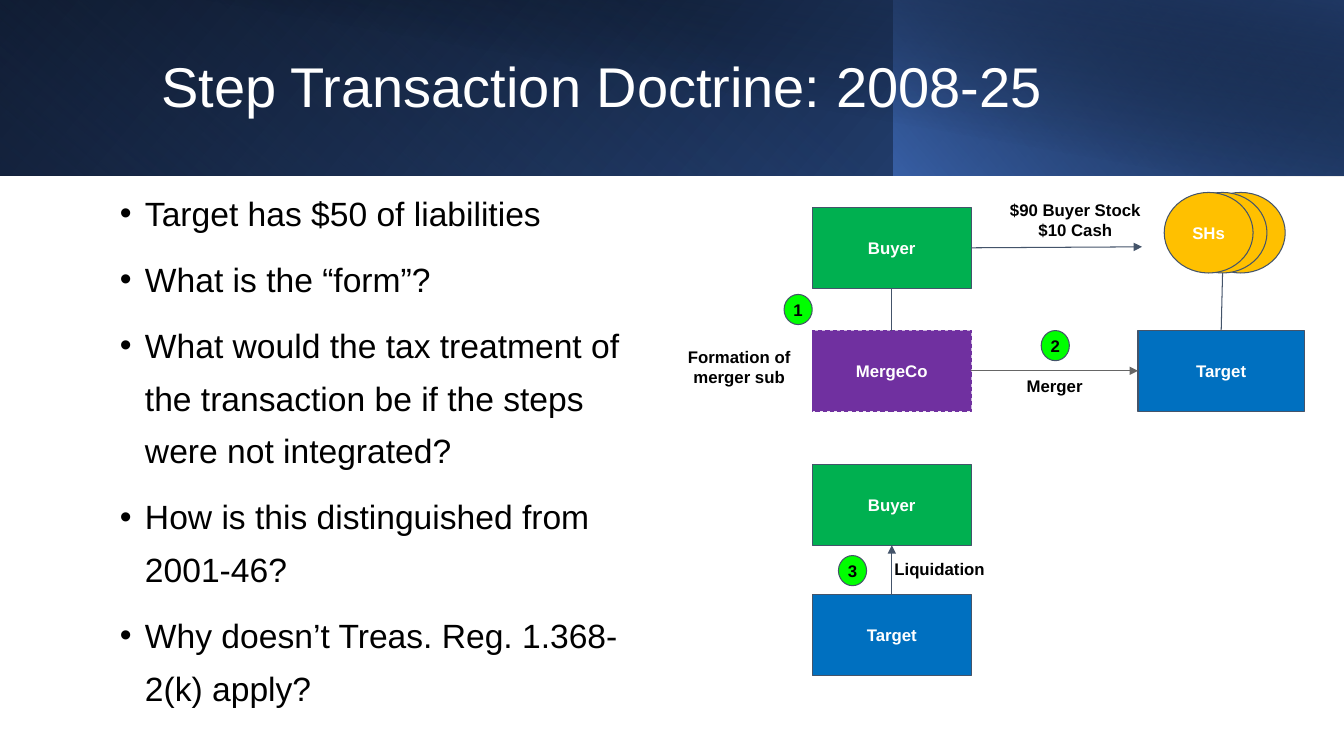
from dataclasses import dataclass

from pptx import Presentation
from pptx.dml.color import RGBColor
from pptx.enum.dml import MSO_LINE
from pptx.enum.shapes import MSO_CONNECTOR, MSO_SHAPE
from pptx.enum.text import MSO_ANCHOR, PP_ALIGN
from pptx.oxml import parse_xml
from pptx.oxml.ns import nsdecls, qn
from pptx.util import Cm, Pt

SLATE, WHITE, BLACK = "44546A", "FFFFFF", "000000"
GREEN, BLUE, PURPLE, GOLD, LIME = "00B050", "0070C0", "7030A0", "FFC000", "00FF00"
BOLD = {"name": "Arial", "size": Pt(12), "bold": True}
TOP, LEFT, BOTTOM, RIGHT = range(4)


@dataclass
class Panel:
    box: tuple
    stops: list  # position, colour, opacity
    angle: int
    flip: bool = True
    turn: int = 0


@dataclass
class Node:
    text: str
    box: tuple
    fill: str
    kind: MSO_SHAPE = MSO_SHAPE.RECTANGLE
    ink: str = WHITE
    line: str = SLATE
    dash: bool = False
    pad: float = 0.25


@dataclass
class Label:
    lines: list
    box: tuple


def color(code: str) -> RGBColor:
    return RGBColor.from_string(code)


def cms(box: tuple) -> list:
    return [Cm(n) for n in box]


def write(frame, lines: list, ink: str, form: dict, para: dict) -> None:
    """Fill a text frame, one paragraph for each line."""
    frame.word_wrap = True
    for i, line in enumerate(lines):
        item = frame.add_paragraph() if i else frame.paragraphs[0]
        for key, value in para.items():
            setattr(item, key, value)
        run = item.add_run()
        run.text = line
        run.font.color.rgb = color(ink)
        for key, value in form.items():
            setattr(run.font, key, value)


def inset(frame, pad: float) -> None:
    for side in ("left", "top", "right", "bottom"):
        setattr(frame, f"margin_{side}", Cm(pad))


def add_panel(slide, panel: Panel) -> None:
    shape = slide.shapes.add_shape(MSO_SHAPE.RECTANGLE, *cms(panel.box))
    shape.shadow.inherit = False
    shape.line.fill.background()
    shape.fill.background()
    shape.rotation = panel.turn
    props = shape._element.spPr
    if panel.flip:
        props.get_or_add_xfrm().set("flipH", "1")
    stops = "".join(
        f'<a:gs pos="{pos * 1000}"><a:srgbClr val="{code}">'
        f'<a:alpha val="{alpha * 1000}"/></a:srgbClr></a:gs>'
        for pos, code, alpha in panel.stops)
    grad = parse_xml(
        f'<a:gradFill {nsdecls("a")} rotWithShape="1"><a:gsLst>{stops}</a:gsLst>'
        f'<a:lin ang="{panel.angle * 60000}" scaled="0"/></a:gradFill>')
    props.replace(props.find(qn("a:noFill")), grad)


def add_node(slide, node: Node):
    shape = slide.shapes.add_shape(node.kind, *cms(node.box))
    shape.shadow.inherit = False
    shape.fill.solid()
    shape.fill.fore_color.rgb = color(node.fill)
    shape.line.color.rgb = color(node.line)
    shape.line.width = Pt(0.75)
    if node.dash:
        shape.line.dash_style = MSO_LINE.DASH
    if node.text:
        frame = shape.text_frame
        inset(frame, node.pad)
        frame.vertical_anchor = MSO_ANCHOR.MIDDLE
        write(frame, [node.text], node.ink, BOLD, {"alignment": PP_ALIGN.CENTER})
    return shape


def add_label(slide, label: Label) -> None:
    frame = slide.shapes.add_textbox(*cms(label.box)).text_frame
    inset(frame, 0.25)
    write(frame, label.lines, BLACK, BOLD, {"alignment": PP_ALIGN.CENTER})


def add_link(slide, start: tuple, end: tuple, arrow: bool = False,
             ink: str = SLATE) -> None:
    """Each end is a (shape, side) pair or an (x, y) point in cm."""
    points = [cms(p) if isinstance(p[0], float) else (0, 0) for p in (start, end)]
    link = slide.shapes.add_connector(MSO_CONNECTOR.STRAIGHT, *points[0], *points[1])
    for spot, join in ((start, link.begin_connect), (end, link.end_connect)):
        if not isinstance(spot[0], float):
            join(*spot)
    link.line.color.rgb = color(ink)
    link.line.width = Pt(0.75)
    if arrow:
        link.line._get_or_add_ln().append(
            parse_xml(f'<a:tailEnd {nsdecls("a")} type="triangle"/>'))
    link._element.spPr.append(parse_xml(f'<a:effectLst {nsdecls("a")}/>'))


def add_points(slide, lines: list, box: tuple) -> None:
    frame = slide.shapes.add_textbox(*cms(box)).text_frame
    write(frame, lines, BLACK, {"name": "Arial", "size": Pt(24)},
          {"line_spacing": 1.3, "space_before": Pt(10)})
    for item in frame.paragraphs:
        props = item._p.get_or_add_pPr()
        props.set("marL", str(Cm(0.635)))
        props.set("indent", str(-Cm(0.635)))
        props.append(parse_xml(f'<a:buFont {nsdecls("a")} typeface="Arial"/>'))
        props.append(parse_xml(f'<a:buChar {nsdecls("a")} char="•"/>'))


def main() -> None:
    deck = Presentation()
    deck.slide_width, deck.slide_height = Cm(33.87), Cm(19.05)
    slide = deck.slides.add_slide(deck.slide_layouts[5])
    title = slide.shapes.title

    # Header band
    for panel in (
        Panel((0, 0, 33.87, 4.42), [(0, BLACK, 100), (100, "2F5597", 100)], 140),
        Panel((0, 0, 22.56, 4.42), [(20, "4472C4", 0), (100, "203864", 55)], 230,
              turn=180),
        Panel((22.53, 0, 11.34, 4.42), [(0, "4472C4", 66), (100, BLACK, 30)], 220),
        Panel((1.27, 0, 32.6, 4.45), [(50, BLACK, 0), (99, "203864", 52)], 280,
              flip=False),
    ):
        add_panel(slide, panel)

    # Title, raised above the band
    slide.shapes._spTree.append(title._element)
    title.left, title.top, title.width, title.height = cms((3.81, 0.81, 27.48, 2.87))
    title.text_frame.vertical_anchor = MSO_ANCHOR.MIDDLE
    write(title.text_frame, ["Step Transaction Doctrine: 2008-25"], WHITE,
          {"name": "Arial", "size": Pt(40)},
          {"alignment": PP_ALIGN.LEFT, "line_spacing": 0.9})

    # Questions
    add_points(slide, [
        "Target has $50 of liabilities",
        "What is the “form”?",
        "What would the tax treatment of the transaction be if the steps "
        "were not integrated?",
        "How is this distinguished from 2001-46?",
        "Why doesn’t Treas. Reg. 1.368-2(k) apply?",
    ], (2.77, 4.42, 13.36, 14.2))

    # Parties
    col, wide, high = 20.47, 4.01, 2.03
    buyer, merge, target, owner, heir = [add_node(slide, node) for node in (
        Node("Buyer", (col, 5.23, wide, high), GREEN),
        Node("MergeCo", (col, 8.33, wide, high), PURPLE, line=PURPLE, dash=True),
        Node("Target", (28.68, 8.33, 4.19, high), BLUE),
        Node("Buyer", (col, 11.71, wide, high), GREEN),
        Node("Target", (col, 14.99, wide, high), BLUE),
    )]
    for left, text in ((30.15, ""), (29.69, ""), (29.34, "SHs")):
        add_node(slide, Node(text, (left, 4.85, 2.24, high), GOLD,
                             MSO_SHAPE.FLOWCHART_CONNECTOR))

    # Links
    add_link(slide, (buyer, BOTTOM), (merge, TOP))
    add_link(slide, (30.81, 6.88), (target, TOP))
    add_link(slide, (merge, RIGHT), (target, LEFT), True, "666666")
    add_link(slide, (buyer, RIGHT), (28.78, 6.22), True)
    add_link(slide, (heir, TOP), (owner, BOTTOM), True)

    # Step numbers
    for step, spot in enumerate(((19.76, 7.42), (26.24, 8.33), (21.13, 14)), 1):
        add_node(slide, Node(str(step), (*spot, 0.71, 0.76), LIME,
                             MSO_SHAPE.OVAL, BLACK, pad=0))

    # Captions
    for label in (
        Label(["Formation of merger sub"], (16.79, 8.48, 3.68, 0.76)),
        Label(["Merger"], (24.74, 9.22, 3.68, 0.76)),
        Label(["$90 Buyer Stock", "$10 Cash"], (25.07, 4.78, 4.06, 1.42)),
        Label(["Liquidation"], (21.84, 13.84, 3.68, 0.76)),
    ):
        add_label(slide, label)

    deck.save("out.pptx")


if __name__ == "__main__":
    main()
